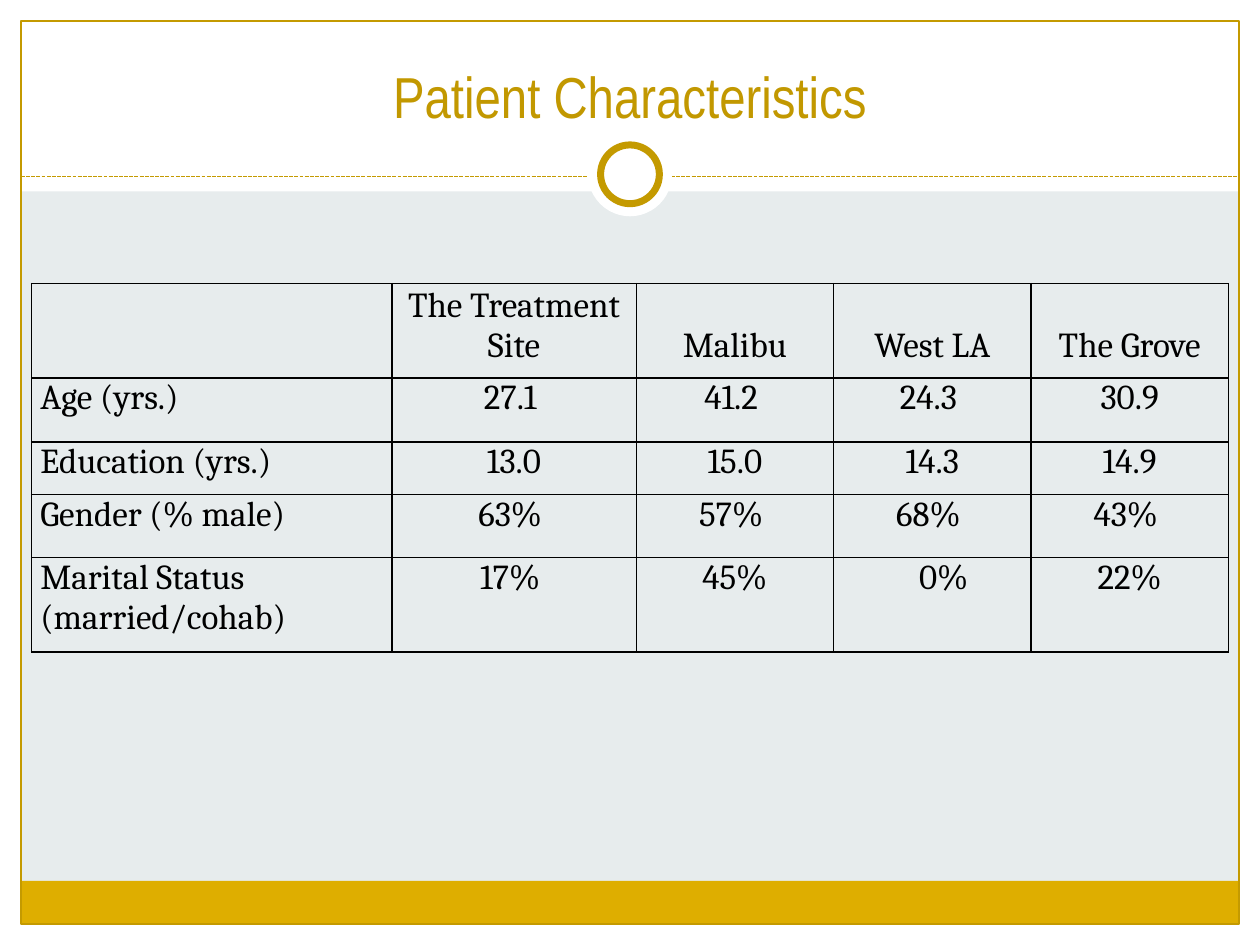
from lxml.etree import SubElement
from pptx import Presentation
from pptx.dml.color import RGBColor
from pptx.enum.dml import MSO_LINE
from pptx.enum.shapes import MSO_CONNECTOR, MSO_SHAPE
from pptx.enum.text import MSO_ANCHOR, PP_ALIGN
from pptx.oxml.ns import qn
from pptx.util import Inches, Pt

COLORS = {
    "background": "E7ECED",
    "paper": "FFFFFF",
    "band": "DEAE00",
    "accent": "C49A00",
    "title": "C29800",
    "ink": "000000",
}
COLUMNS, ROWS = 60, 45  # square grid cells of 1/6 inch

PATIENTS = [
    ["", "The Treatment Site", "Malibu", "West LA", "The Grove"],
    ["Age (yrs.)", "27.1", "41.2", "24.3", "30.9"],
    ["Education (yrs.)", "13.0", "15.0", "14.3", "14.9"],
    ["Gender (% male)", "63%", "57%", "68%", "43%"],
    ["Marital Status (married/cohab)", "17%", "45%", "0%", "22%"],
]
COLUMN_WIDTHS = [17.16, 11.64, 9.4, 9.4, 9.4]
ROW_HEIGHTS = [4.5, 3.06, 2.5, 3, 4.5]
# Inches by which a centred value sits off the middle of its cell
OFFSETS = {cell: -0.03 for cell in
           [(1, 1), (1, 2), (1, 3), (3, 1), (3, 2), (3, 3), (3, 4), (4, 1)]}
OFFSETS[4, 3] = 0.09


def rgb(name):
    return RGBColor.from_string(COLORS[name])


class SlideBuilder:
    """Draws styled elements on one slide; lengths are grid columns and rows."""

    title_font, table_font = "Arial Narrow", "Cambria"
    title_size, table_size = 33, 20
    cell_margin = 0.07

    def __init__(self, presentation):
        self.slide = presentation.slides.add_slide(presentation.slide_layouts[5])
        self.unit = presentation.slide_width / COLUMNS
        fill = self.slide.background.fill
        fill.solid()
        fill.fore_color.rgb = rgb("background")

    def grid(self, *lengths):
        return [round(length * self.unit) for length in lengths]

    def format_text(self, paragraph, font, size, color):
        for run in paragraph.runs:
            run.font.name = font
            run.font.size = Pt(size)
            run.font.color.rgb = rgb(color)

    def shape(self, kind, box, fill=None, line=None, width=0.75):
        shape = self.slide.shapes.add_shape(kind, *self.grid(*box))
        shape.shadow.inherit = False
        if fill:
            shape.fill.solid()
            shape.fill.fore_color.rgb = rgb(fill)
        else:
            shape.fill.background()
        if line:
            shape.line.color.rgb = rgb(line)
            shape.line.width = Pt(width)
        else:
            shape.line.fill.background()

    def dashed_line(self, start, end):
        divider = self.slide.shapes.add_connector(
            MSO_CONNECTOR.STRAIGHT, *self.grid(*start, *end))
        divider.line.color.rgb = rgb("accent")
        divider.line.width = Pt(0.75)
        divider.line.dash_style = MSO_LINE.SQUARE_DOT
        SubElement(divider._element.spPr, qn("a:effectLst"))

    def title(self, text, box):
        """Fill the title placeholder and bring it in front of the frame."""
        title = self.slide.shapes.title
        title.left, title.top, title.width, title.height = self.grid(*box)
        title.text_frame.text = text
        title.text_frame.vertical_anchor = MSO_ANCHOR.BOTTOM
        heading = title.text_frame.paragraphs[0]
        heading.alignment = PP_ALIGN.CENTER
        self.format_text(heading, self.title_font, self.title_size, "title")
        self.slide.shapes._spTree.append(title._element)

    def borders(self, cell):
        properties = cell._tc.get_or_add_tcPr()
        for side in ("lnL", "lnR", "lnT", "lnB"):
            line = SubElement(properties, qn(f"a:{side}"), w=str(Pt(1)))
            ink = SubElement(line, qn("a:solidFill"))
            SubElement(ink, qn("a:srgbClr"), val=COLORS["ink"])

    def table(self, data, left, top, widths, heights, offsets):
        box = self.grid(left, top, sum(widths), sum(heights))
        table = self.slide.shapes.add_table(len(data), len(widths), *box).table
        table.first_row = table.horz_banding = False
        for column, width in zip(table.columns, self.grid(*widths)):
            column.width = width
        for row, height in zip(table.rows, self.grid(*heights)):
            row.height = height
        for r, values in enumerate(data):
            for c, value in enumerate(values):
                self.cell(table.cell(r, c), value, r == 0, c > 0,
                          offsets.get((r, c), 0))

    def cell(self, cell, value, is_header, is_centered, offset):
        self.borders(cell)
        cell.fill.background()
        cell.margin_left = Inches(self.cell_margin + max(2 * offset, 0))
        cell.margin_right = Inches(self.cell_margin + max(-2 * offset, 0))
        cell.margin_top = 0
        cell.margin_bottom = Inches(0.09 if is_header else 0)
        cell.vertical_anchor = MSO_ANCHOR.BOTTOM if is_header else MSO_ANCHOR.TOP
        cell.text_frame.text = value
        entry = cell.text_frame.paragraphs[0]
        entry.alignment = PP_ALIGN.CENTER if is_centered else PP_ALIGN.LEFT
        self.format_text(entry, self.table_font, self.table_size, "ink")


def main():
    presentation = Presentation()
    presentation.slide_width, presentation.slide_height = Inches(10), Inches(7.5)
    builder = SlideBuilder(presentation)

    right, bottom = COLUMNS - 1, ROWS - 1
    for margin in [(0, bottom, COLUMNS, 1), (0, 0, COLUMNS, 9.12),
                   (0, 0, 1, ROWS), (right, 0, 1, ROWS)]:
        builder.shape(MSO_SHAPE.RECTANGLE, margin, fill="paper")
    builder.shape(MSO_SHAPE.RECTANGLE, (1, bottom - 2.05, right - 1, 2.05),
                  fill="band")
    builder.shape(MSO_SHAPE.RECTANGLE, (1, 1, right - 1, bottom - 1),
                  line="accent")
    builder.dashed_line((1, 8.4), (right, 8.4))
    builder.shape(MSO_SHAPE.OVAL, (28, 6.3, 4, 4), fill="paper")
    builder.shape(MSO_SHAPE.OVAL, (28.6, 6.9, 2.8, 2.8), fill="paper",
                  line="accent", width=4)

    builder.title("Patient Characteristics", (2, 1.5, 56, 5))
    builder.table(PATIENTS, 1.5, 13.5, COLUMN_WIDTHS, ROW_HEIGHTS, OFFSETS)
    presentation.save("out.pptx")


if __name__ == "__main__":
    main()
